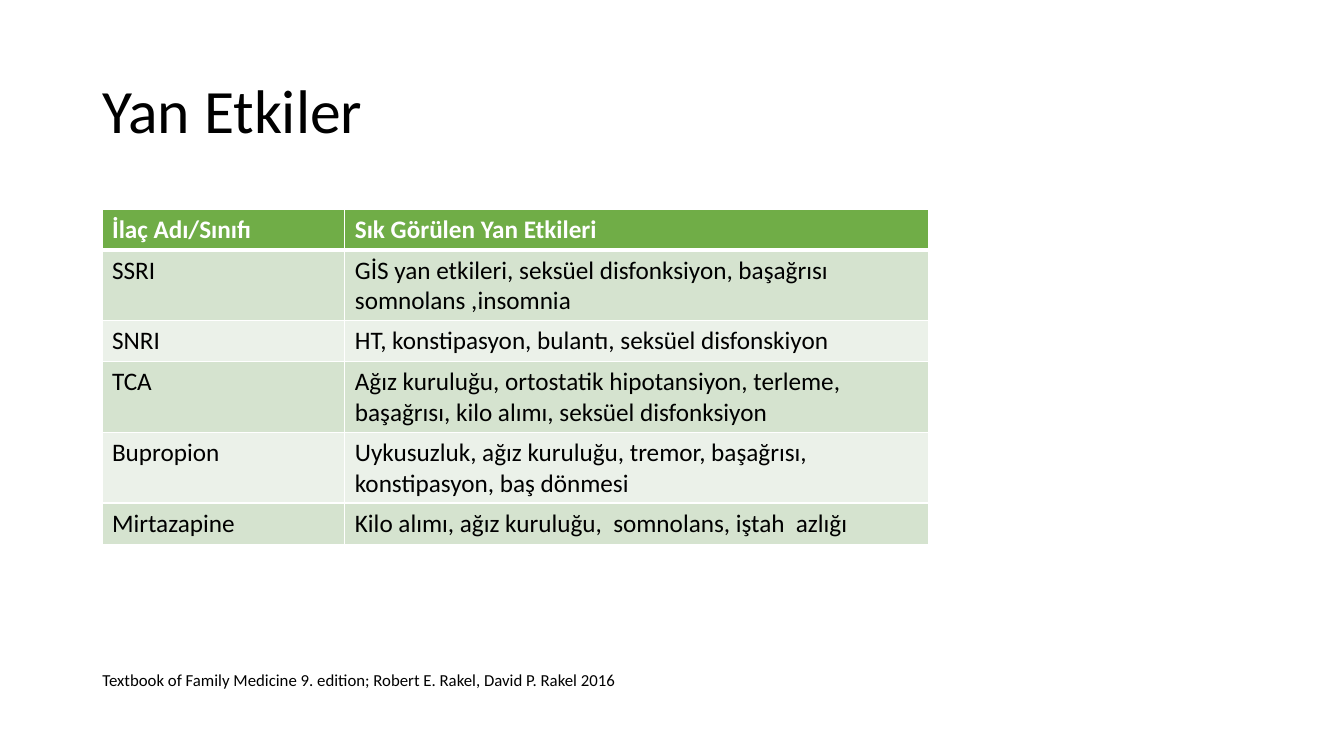
from lxml.etree import SubElement
from pptx import Presentation
from pptx.dml.color import RGBColor
from pptx.enum.text import MSO_ANCHOR as Anchor, MSO_AUTO_SIZE as Auto
from pptx.oxml.ns import qn
from pptx.util import Cm, Pt

# Content
TITLE = "Yan Etkiler"
ROWS = [
    ("İlaç Adı/Sınıfı", "Sık Görülen Yan Etkileri"),
    ("SSRI", "GİS yan etkileri, seksüel disfonksiyon, başağrısı somnolans ,insomnia"),
    ("SNRI", "HT, konstipasyon, bulantı, seksüel disfonskiyon"),
    ("TCA", "Ağız kuruluğu, ortostatik hipotansiyon, terleme, başağrısı, kilo alımı, seksüel disfonksiyon"),
    ("Bupropion", "Uykusuzluk, ağız kuruluğu, tremor, başağrısı, konstipasyon, baş dönmesi"),
    ("Mirtazapine", "Kilo alımı, ağız kuruluğu,  somnolans, iştah  azlığı"),
]
SOURCE = "Textbook of Family Medicine 9. edition; Robert E. Rakel, David P. Rakel 2016"

# Look
FONT = "Calibri"
BLACK = RGBColor(0x00, 0x00, 0x00)
WHITE = RGBColor(0xFF, 0xFF, 0xFF)
GREEN = RGBColor(0x70, 0xAD, 0x47)
BANDS = (RGBColor(0xEB, 0xF1, 0xE9), RGBColor(0xD5, 0xE3, 0xCF))
WIDTHS = (6.12, 14.71)
HEAD, BODY, FULL = 1.02, 1.04, 8.41


def write(frame, text, size=18, color=BLACK, bold=False, lead=None):
    frame.word_wrap = True
    para = frame.paragraphs[0]
    para.line_spacing = lead
    run = para.add_run()
    run.text = text
    font = run.font
    font.name, font.size, font.bold = FONT, Pt(size), bold
    font.color.rgb = color


def edge(cell, side, width):
    line = SubElement(cell._tc.get_or_add_tcPr(), qn("a:ln" + side), w=str(Pt(width)))
    fill = SubElement(line, qn("a:solidFill"))
    SubElement(fill, qn("a:srgbClr"), val=str(WHITE))


deck = Presentation()
deck.slide_width, deck.slide_height = Cm(33.87), Cm(19.05)
slide = deck.slides.add_slide(deck.slide_layouts[6])

# Title
box = slide.shapes.add_textbox(Cm(2.33), Cm(1.01), Cm(29.21), Cm(3.68))
box.text_frame.vertical_anchor = Anchor.MIDDLE
write(box.text_frame, TITLE, size=44, lead=0.9)

# Table
frame = slide.shapes.add_table(len(ROWS), len(WIDTHS), Cm(2.57), Cm(5.28),
                               Cm(sum(WIDTHS)), Cm(FULL))
table = frame.table
for col, width in zip(table.columns, WIDTHS):
    col.width = Cm(width)
for r, row in enumerate(ROWS):
    head = r == 0
    table.rows[r].height = Cm(HEAD if head else BODY)
    for c, text in enumerate(row):
        cell = table.cell(r, c)
        write(cell.text_frame, text, color=WHITE if head else BLACK, bold=head)
        for side in "LRTB":
            thick = (r, side) in ((0, "B"), (1, "T"))
            edge(cell, side, 3 if thick else 1)
        cell.fill.solid()
        cell.fill.fore_color.rgb = GREEN if head else BANDS[r % 2]
frame.height = Cm(FULL)

# Source line
box = slide.shapes.add_textbox(Cm(2.33), Cm(16.76), Cm(22.73), Cm(0.77))
box.text_frame.auto_size = Auto.SHAPE_TO_FIT_TEXT
write(box.text_frame, SOURCE, size=12)

deck.save("out.pptx")
